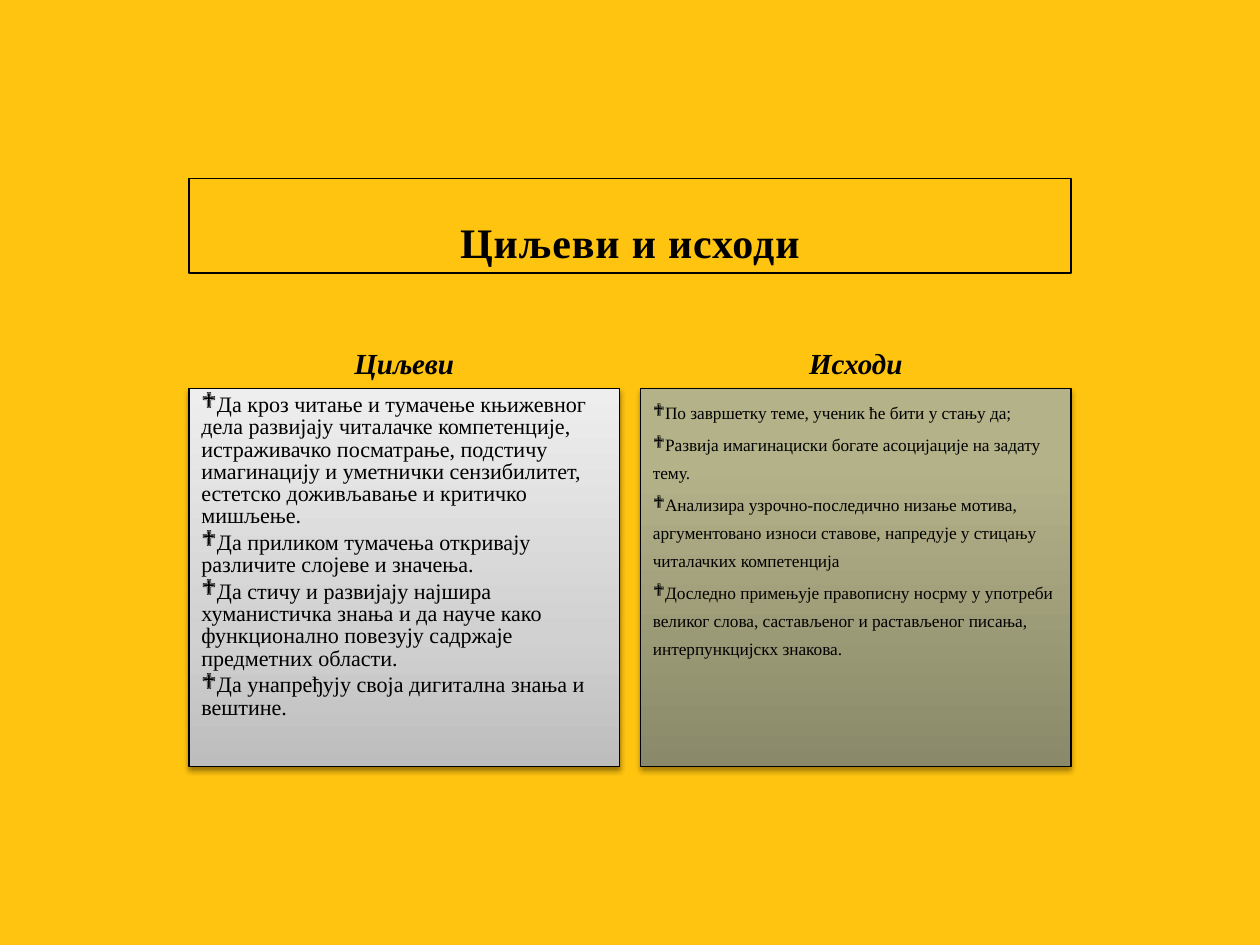
import lxml.etree
import pptx
import pptx.dml.color
import pptx.enum.shapes
import pptx.enum.text
import pptx.oxml.ns
import pptx.util

Pt = pptx.util.Pt
ALIGN = pptx.enum.text.PP_ALIGN
ANCHOR = pptx.enum.text.MSO_ANCHOR
FONT = "Times New Roman"
COLORS = {"background": "FFC40F", "ink": "000000"}
GOAL_STOPS = [(0, "BDBDBD"), (35, "D1D1D1"), (100, "EEEEEE")]
OUTCOME_STOPS = [(0, "8A8969"), (80, "B3B289"), (100, "B5B488")]

LEFT, WIDTH, COLUMN_WIDTH = 108, 504, 246
COLUMN_STEP = WIDTH - COLUMN_WIDTH

GOALS = [
    "Да кроз читање и тумачење књижевног дела развијају читалачке компетенције, "
    "истраживачко посматрање, подстичу имагинацију и уметнички сензибилитет, "
    "естетско доживљавање и критичко мишљење.",
    "Да приликом тумачења откривају различите слојеве и значења.",
    "Да стичу и развијају најшира хуманистичка знања и да науче како "
    "функционално повезују садржаје предметних области.",
    "Да унапређују своја дигитална знања и вештине.",
]
OUTCOMES = [
    "По завршетку теме, ученик ће бити у стању да;",
    "Развија имагинациски богате асоцијације на задату тему.",
    "Анализира узрочно-последично низање мотива, аргументовано износи ставове, "
    "напредује у стицању читалачких компетенција",
    "Доследно примењује правописну носрму у употреби великог слова, "
    "састављеног и растављеног писања, интерпункцијскх знакова.",
]


def color(name):
    return pptx.dml.color.RGBColor.from_string(COLORS[name])


def add_child(parent, tag, **attributes):
    """Append a DrawingML element, with its attributes as text."""
    values = {name: str(value) for name, value in attributes.items()}
    return lxml.etree.SubElement(parent, pptx.oxml.ns.qn(f"a:{tag}"), values)


def add_span(para, text, size, bold=False, italic=False):
    span = para.add_run()
    span.text = text
    font = span.font
    font.name, font.size, font.bold, font.italic = FONT, Pt(size), bold, italic
    font.color.rgb = color("ink")
    return span


def set_outline(shape):
    shape.line.color.rgb = color("ink")
    shape.line.width = Pt(0.75)


def set_gradient(shape, stops):
    """Fill from bottom to top with (percent, colour) stops."""
    shape.fill.gradient()
    shape.fill.gradient_angle = 90
    stop_list = shape.element.spPr.find(".//" + pptx.oxml.ns.qn("a:gsLst"))
    for stop in list(stop_list):
        stop_list.remove(stop)
    for percent, value in stops:
        stop = add_child(stop_list, "gs", pos=percent * 1000)
        add_child(stop, "srgbClr", val=value)


def set_shadow(shape, opacity, distance):
    shape.shadow.inherit = False
    effects = shape.element.spPr.find(pptx.oxml.ns.qn("a:effectLst"))
    shadow = add_child(effects, "outerShdw", blurRad=Pt(3.1), dist=Pt(distance),
                       dir=90 * 60000, rotWithShape=0)
    shade = add_child(shadow, "srgbClr", val=COLORS["ink"])
    add_child(shade, "alpha", val=opacity * 1000)


def set_bullet(para):
    properties = para._p.get_or_add_pPr()
    properties.set("marL", "0")
    properties.set("indent", "0")
    add_child(properties, "buFont", typeface="Wingdings")
    add_child(properties, "buChar", char="❖")


def add_title(page, text):
    title = page.shapes.title
    title.left, title.top, title.width, title.height = Pt(LEFT), Pt(102), Pt(WIDTH), Pt(54)
    set_outline(title)
    title.text_frame.vertical_anchor = ANCHOR.BOTTOM
    para = title.text_frame.paragraphs[0]
    para.alignment = ALIGN.CENTER
    span = add_span(para, text, 24, bold=True)
    span.font._element.set("spc", "50")


def add_heading(page, left, text):
    box = page.shapes.add_textbox(Pt(left), Pt(185.8), Pt(COLUMN_WIDTH), Pt(35.3))
    frame = box.text_frame
    frame.word_wrap = True
    frame.vertical_anchor = ANCHOR.BOTTOM
    para = frame.paragraphs[0]
    para.alignment = ALIGN.CENTER
    para.line_spacing = 1.3
    add_span(para, text, 16.6, bold=True, italic=True)


def add_panel(page, left, items, size, spacing, stops, opacity, distance):
    panel = page.shapes.add_shape(pptx.enum.shapes.MSO_SHAPE.RECTANGLE,
                                  Pt(left), Pt(222), Pt(COLUMN_WIDTH), Pt(216))
    set_gradient(panel, stops)
    set_outline(panel)
    set_shadow(panel, opacity, distance)
    frame = panel.text_frame
    frame.word_wrap = True
    frame.vertical_anchor = ANCHOR.TOP
    for index, item in enumerate(items):
        para = frame.add_paragraph() if index else frame.paragraphs[0]
        para.alignment = ALIGN.LEFT
        para.line_spacing = spacing
        para.space_before = Pt(round(size * 0.2, 1) if index else 0)
        set_bullet(para)
        add_span(para, item, size)


def main():
    deck = pptx.Presentation()
    deck.slide_width, deck.slide_height = Pt(720), Pt(540)
    page = deck.slides.add_slide(deck.slide_layouts[5])
    page.background.fill.solid()
    page.background.fill.fore_color.rgb = color("background")

    right = LEFT + COLUMN_STEP
    add_panel(page, LEFT, GOALS, 12.6, 0.84, GOAL_STOPS, 38, 1.6)
    add_panel(page, right, OUTCOMES, 9.9, 1.36, OUTCOME_STOPS, 35, 1.8)
    add_title(page, "Циљеви и исходи")
    add_heading(page, LEFT, "Циљеви")
    add_heading(page, right, "Исходи")
    deck.save("out.pptx")


if __name__ == "__main__":
    main()
